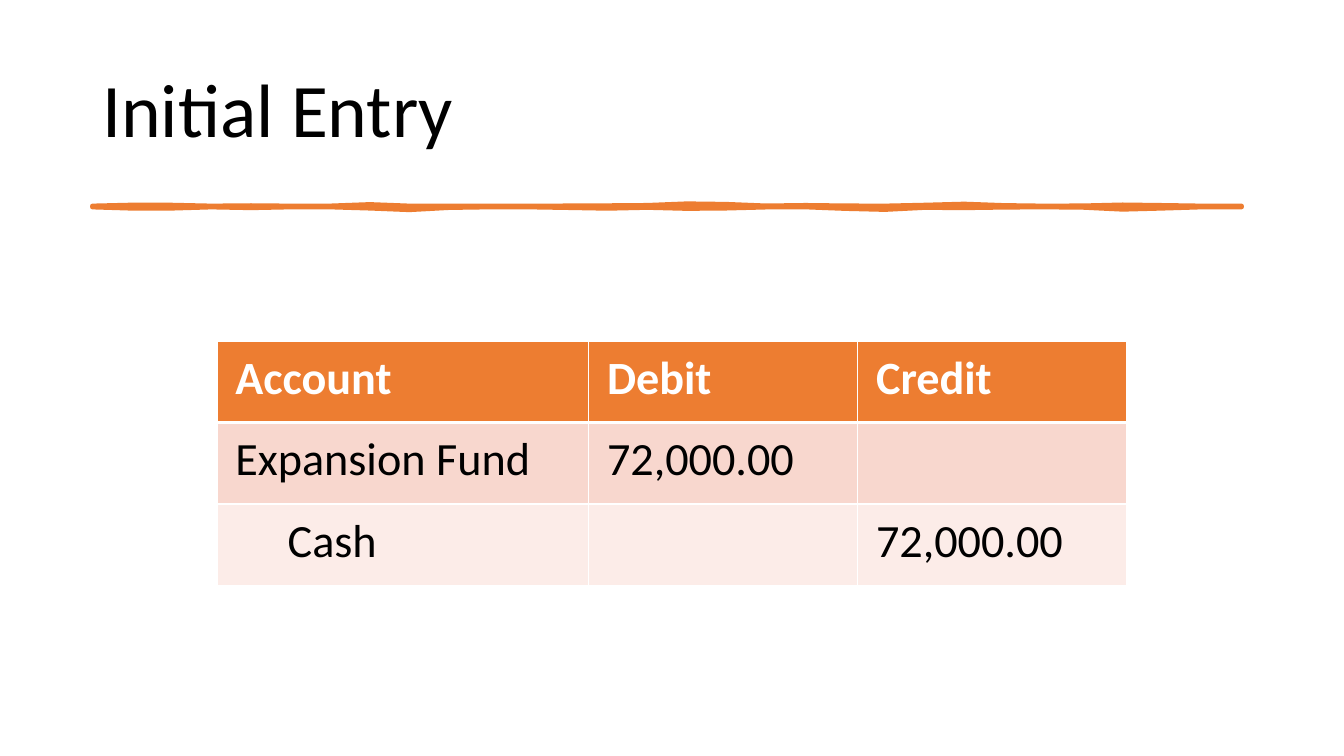
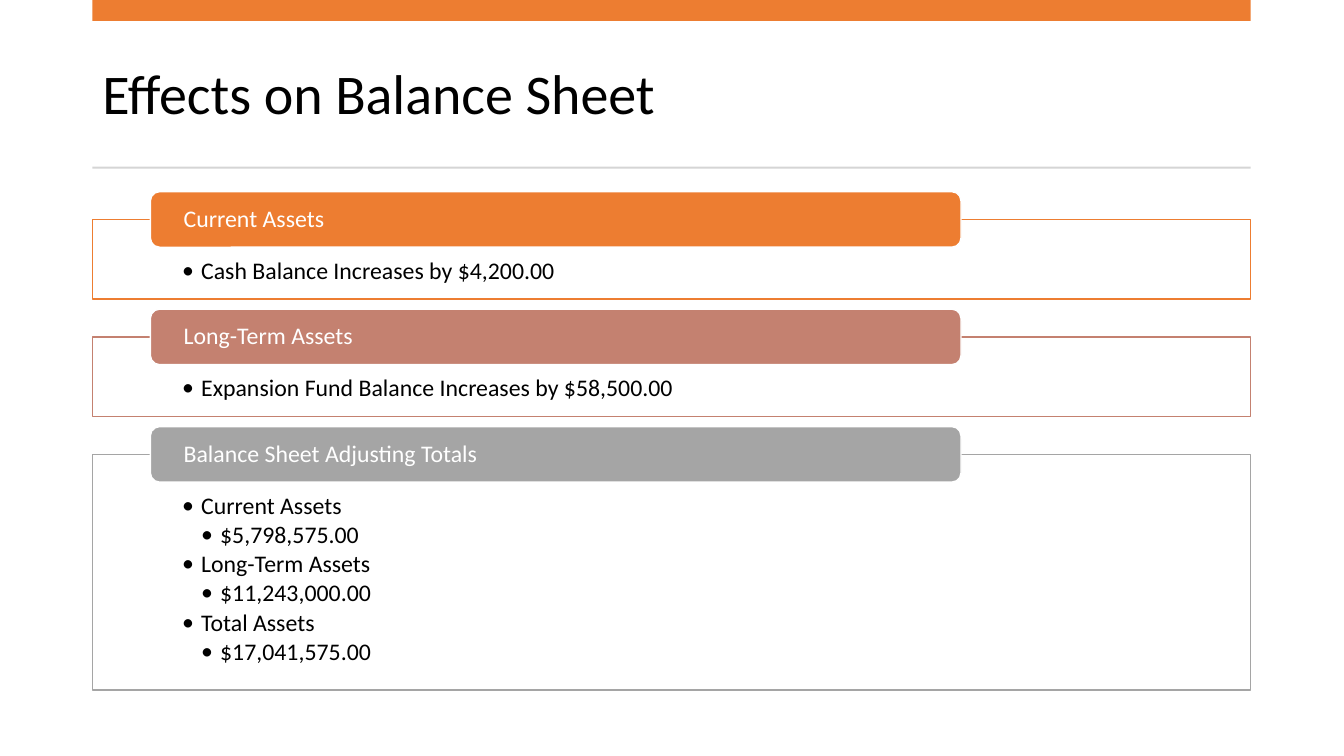
import math
from dataclasses import dataclass

from lxml import etree
from pptx import Presentation
from pptx import util as u
from pptx.dml import color
from pptx.enum import shapes, text
from pptx.oxml import ns

COLORS = {
    "orange": "ED7D31",
    "rose": "C48170",
    "gray": "A5A5A5",
    "rule": "D5D5D5",
    "white": "FFFFFF",
    "black": "000000",
    "row_dark": "F8D7CE",
    "row_light": "FCECE8",
}
FONT = "Calibri"
LEFT, WIDTH = 2.33, 29.19
TEXT_SIZE = 17
TAG_LEFT, TAG_WIDTH, TAG_HEIGHT = 3.79, 20.43, 1.4
SECTION_TOP, SECTION_GAP = 5.53, 0.95
BULLET_INDENT = 0.48
STROKE_TOP, STROKE_BOTTOM, STROKE_WIDTH = 5.19, 5.22, 28.96
STROKE_STEPS = 29

TITLE_FRAME = {"word_wrap": True, "vertical_anchor": text.MSO_ANCHOR.MIDDLE}
BODY_FRAME = {
    "word_wrap": True,
    "vertical_anchor": text.MSO_ANCHOR.TOP,
    "margin_left": u.Cm(2.26),
    "margin_right": u.Cm(2.26),
    "margin_top": u.Cm(0.99),
    "margin_bottom": u.Cm(0.33),
}
TAG_FRAME = {
    "word_wrap": True,
    "vertical_anchor": text.MSO_ANCHOR.MIDDLE,
    "margin_left": u.Cm(0.77),
    "margin_right": u.Cm(0.77),
    "margin_top": 0,
    "margin_bottom": 0,
}
CELL_FORMAT = {
    "margin_left": u.Cm(0.46),
    "margin_right": u.Cm(0.46),
    "margin_top": u.Cm(0.23),
    "margin_bottom": u.Cm(0.23),
}
LINE_FORMAT = {"alignment": text.PP_ALIGN.LEFT, "line_spacing": 0.9}
BULLET_FORMAT = LINE_FORMAT | {"space_after": u.Pt(2.5)}


@dataclass(frozen=True)
class Bulge:
    center: float
    reach: float
    up: float
    down: float


@dataclass(frozen=True)
class Row:
    values: tuple[str, ...]
    fill: str
    color: str = "black"
    bold: bool = False
    indent: float = 0
    bottom: float = 1


@dataclass(frozen=True)
class Section:
    heading: str
    color: str
    height: float
    bullets: tuple[tuple[int, str], ...]


BULGES = (
    Bulge(3.8, 1.6, 0.03, 0.04),
    Bulge(6.2, 1.0, 0.01, 0.02),
    Bulge(9.2, 1.0, 0.04, 0),
    Bulge(10.2, 1.6, 0, 0.07),
    Bulge(15.0, 1.2, 0.01, 0.04),
    Bulge(17.6, 2.0, 0.06, 0.04),
    Bulge(20.6, 1.0, 0.02, 0),
    Bulge(22.0, 1.5, 0, 0.07),
    Bulge(24.2, 1.7, 0.05, 0.02),
    Bulge(28.5, 1.6, 0.03, 0.06),
)
ROWS = (
    Row(("Account", "Debit", "Credit"), "orange", "white", True, bottom=3),
    Row(("Expansion Fund", "72,000.00", ""), "row_dark"),
    Row(("Cash", "", "72,000.00"), "row_light", indent=1.32),
)
SECTIONS = (
    Section("Current Assets", "orange", 2.01,
            ((0, "Cash Balance Increases by $4,200.00"),)),
    Section("Long-Term Assets", "rose", 2.01,
            ((0, "Expansion Fund Balance Increases by $58,500.00"),)),
    Section("Balance Sheet Adjusting Totals", "gray", 5.94,
            ((0, "Current Assets"), (1, "$5,798,575.00"),
             (0, "Long-Term Assets"), (1, "$11,243,000.00"),
             (0, "Total Assets"), (1, "$17,041,575.00"))),
)


def rgb(name: str) -> color.RGBColor:
    return color.RGBColor.from_string(COLORS[name])


def apply(target, values: dict) -> None:
    for name, value in values.items():
        setattr(target, name, value)


def write(p, content: str, size: float, tint: str, bold: bool = False) -> None:
    r = p.add_run()
    r.text = content
    apply(r.font, {"name": FONT, "size": u.Pt(size), "bold": bold})
    r.font.color.rgb = rgb(tint)


def paint(sp, fill: str, line: str | None = None, weight: float = 1) -> None:
    sp.shadow.inherit = False
    sp.fill.solid()
    sp.fill.fore_color.rgb = rgb(fill)
    if line:
        sp.line.color.rgb = rgb(line)
        sp.line.width = u.Pt(weight)
    else:
        sp.line.fill.background()


def add_box(s, kind, left: float, top: float, width: float, height: float,
            fill: str, line: str | None = None):
    sp = s.shapes.add_shape(kind, u.Cm(left), u.Cm(top), u.Cm(width), u.Cm(height))
    paint(sp, fill, line)
    return sp


def add_title(s, content: str, size: float, top: float, height: float) -> None:
    sp = s.shapes.add_textbox(u.Cm(LEFT), u.Cm(top), u.Cm(WIDTH), u.Cm(height))
    apply(sp.text_frame, TITLE_FRAME)
    p = sp.text_frame.paragraphs[0]
    apply(p, LINE_FORMAT)
    write(p, content, size, "black")


def swell(x: float, side: str) -> float:
    return sum(
        getattr(b, side) * (1 + math.cos(math.pi * (x - b.center) / b.reach)) / 2
        for b in BULGES if abs(x - b.center) < b.reach
    )


def add_brush_stroke(s) -> None:
    xs = [LEFT + STROKE_WIDTH * i / STROKE_STEPS for i in range(STROKE_STEPS + 1)]
    upper = [(u.Cm(x), u.Cm(STROKE_TOP - swell(x, "up"))) for x in xs]
    lower = [(u.Cm(x), u.Cm(STROKE_BOTTOM + swell(x, "down"))) for x in xs]
    outline = upper + lower[::-1]
    builder = s.shapes.build_freeform(*outline[0])
    builder.add_line_segments(outline[1:], close=True)
    sp = builder.convert_to_shape()
    paint(sp, "orange", "orange", 3.25)
    etree.SubElement(sp.line._get_or_add_ln(), ns.qn("a:round"))


def add_borders(cell, top: float, bottom: float) -> None:
    tc_pr = cell._tc.get_or_add_tcPr()
    weights = {"a:lnL": 1, "a:lnR": 1, "a:lnT": top, "a:lnB": bottom}
    for i, (tag, weight) in enumerate(weights.items()):
        ln = etree.Element(ns.qn(tag), w=str(u.Pt(weight)))
        fill = etree.SubElement(ln, ns.qn("a:solidFill"))
        etree.SubElement(fill, ns.qn("a:srgbClr"), val=COLORS["white"])
        tc_pr.insert(i, ln)


def add_entry_table(s) -> None:
    widths, height = (9.37, 6.78, 6.78), 2.05
    table = s.shapes.add_table(
        len(ROWS), len(widths), u.Cm(5.47), u.Cm(8.6),
        u.Cm(sum(widths)), u.Cm(height * len(ROWS))).table
    for column, width in zip(table.columns, widths):
        column.width = u.Cm(width)
    top = 1
    for i, row in enumerate(ROWS):
        table.rows[i].height = u.Cm(height)
        for j, value in enumerate(row.values):
            cell = table.cell(i, j)
            apply(cell, CELL_FORMAT)
            cell.fill.solid()
            cell.fill.fore_color.rgb = rgb(row.fill)
            add_borders(cell, top, row.bottom)
            p = cell.text_frame.paragraphs[0]
            if value:
                write(p, value, 33, row.color, row.bold)
            if j == 0 and row.indent:
                p._p.get_or_add_pPr().set("marL", str(u.Cm(row.indent)))
        top = row.bottom


def add_bullet(p, level: int, content: str) -> None:
    apply(p, BULLET_FORMAT | {"level": level})
    p_pr = p._p.get_or_add_pPr()
    p_pr.set("marL", str(u.Cm(BULLET_INDENT * (level + 1))))
    p_pr.set("indent", str(-u.Cm(BULLET_INDENT)))
    etree.SubElement(p_pr, ns.qn("a:buFont"), typeface=FONT)
    etree.SubElement(p_pr, ns.qn("a:buChar"), char="•")
    write(p, content, TEXT_SIZE, "black")


def add_section(s, section: Section, top: float) -> None:
    body = add_box(s, shapes.MSO_SHAPE.RECTANGLE, LEFT, top, WIDTH,
                   section.height, "white", section.color)
    tf = body.text_frame
    apply(tf, BODY_FRAME)
    for i, (level, content) in enumerate(section.bullets):
        p = tf.add_paragraph() if i else tf.paragraphs[0]
        add_bullet(p, level, content)

    tag = add_box(s, shapes.MSO_SHAPE.ROUNDED_RECTANGLE, TAG_LEFT,
                  top - TAG_HEIGHT / 2, TAG_WIDTH, TAG_HEIGHT,
                  section.color, "white")
    apply(tag.text_frame, TAG_FRAME)
    p = tag.text_frame.paragraphs[0]
    apply(p, LINE_FORMAT)
    write(p, section.heading, TEXT_SIZE, "white")


def build_entry_slide(s) -> None:
    add_title(s, "Initial Entry", 54, 1.02, 3.68)
    add_brush_stroke(s)
    add_entry_table(s)


def build_balance_slide(s) -> None:
    add_title(s, "Effects on Balance Sheet", 40, 0.94, 3)
    for top, height, fill in ((0, 0.53, "orange"), (4.2, 0.05, "rule")):
        add_box(s, shapes.MSO_SHAPE.RECTANGLE, LEFT, top, WIDTH, height, fill)
    top = SECTION_TOP
    for section in SECTIONS:
        add_section(s, section, top)
        top += section.height + SECTION_GAP


def main() -> None:
    prs = Presentation()
    prs.slide_width, prs.slide_height = u.Cm(33.87), u.Cm(19.05)
    for build in (build_entry_slide, build_balance_slide):
        build(prs.slides.add_slide(prs.slide_layouts[6]))
    prs.save("out.pptx")


if __name__ == "__main__":
    main()
